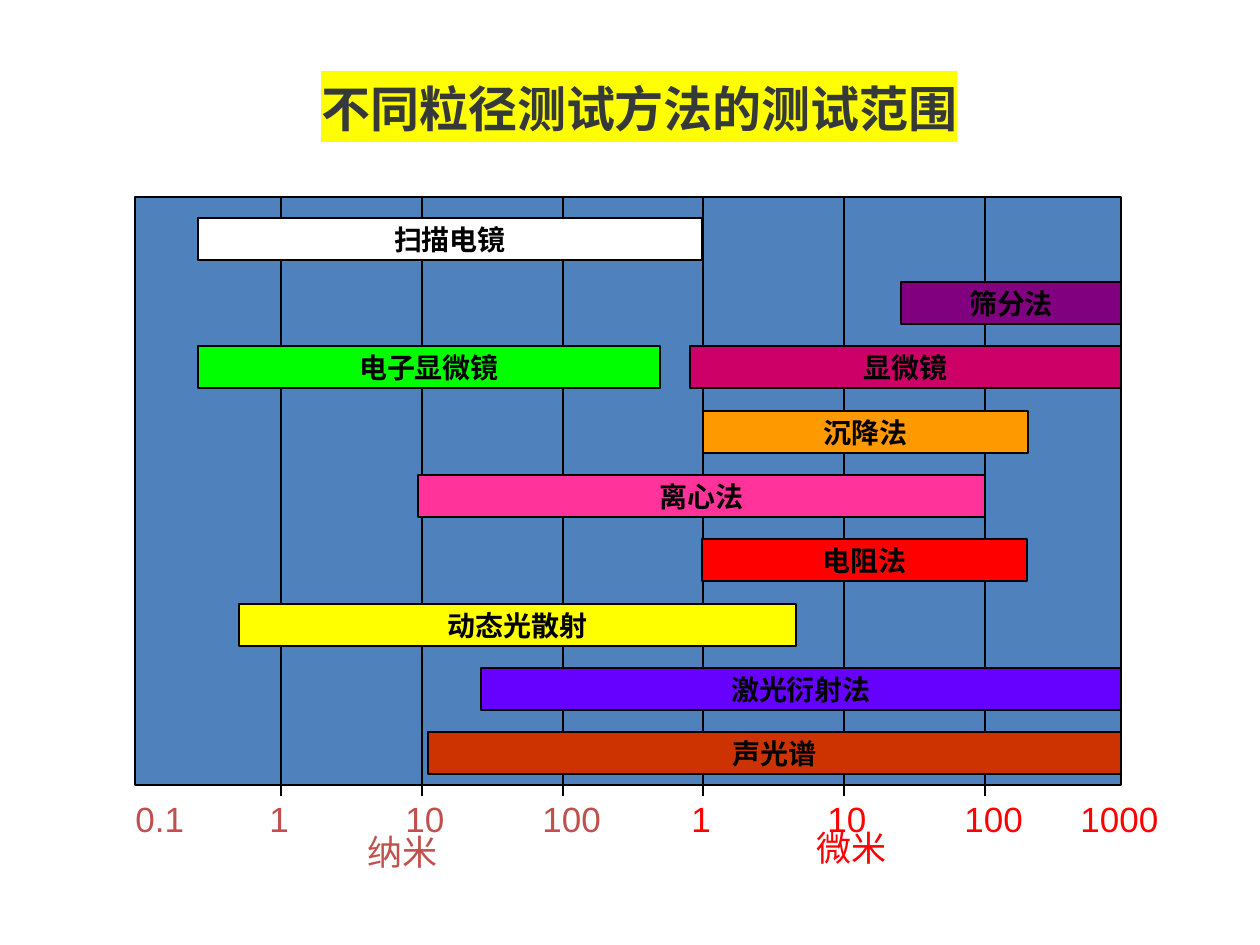
from lxml import etree
from pptx import Presentation
from pptx.dml.color import RGBColor
from pptx.enum.shapes import MSO_CONNECTOR, MSO_SHAPE
from pptx.enum.text import MSO_ANCHOR, PP_ALIGN
from pptx.oxml.ns import qn
from pptx.util import Emu, Pt

RECTANGLE = MSO_SHAPE.RECTANGLE
STRAIGHT = MSO_CONNECTOR.STRAIGHT
MIDDLE = MSO_ANCHOR.MIDDLE
CENTER = PP_ALIGN.CENTER

EMU_PER_PX = 914400 / 126
LATIN_FONT = "Arial"
CJK_FONT = "Noto Sans CJK SC"
BLACK = "000000"
NANO_COLOR = "C0504D"
MICRO_COLOR = "FF0000"

PLOT_LEFT, PLOT_TOP, PLOT_WIDTH, PLOT_HEIGHT = 135, 197, 986, 588
TICK_BOTTOM = 796
FIRST_DECADE, DECADE_STEP = 281, 140.8
LABEL_TOP, LABEL_HEIGHT = 791, 54
FIRST_BAR, BAR_STEP, BAR_HEIGHT = 218, 64.25, 42

DECADES = [
    ("1", NANO_COLOR), ("10", NANO_COLOR), ("100", NANO_COLOR),
    ("1", MICRO_COLOR), ("10", MICRO_COLOR), ("100", MICRO_COLOR),
]
# Number of digits: distance from the gridline to the label's left, label width
LABEL_SIZES = {1: (24, 42), 2: (29, 73), 3: (33, 95)}

# Method, row, left, width, fill
METHODS = [
    ("扫描电镜", 0, 198, 504, "FFFFFF"),
    ("筛分法", 1, 901, 220, "800080"),
    ("电子显微镜", 2, 198, 462, "00FF00"),
    ("显微镜", 2, 690, 431, "CC0066"),
    ("沉降法", 3, 703, 325, "FF9900"),
    ("离心法", 4, 418, 567, "FF3399"),
    ("电阻法", 5, 702, 325, "FF0000"),
    ("动态光散射", 6, 239, 557, "FFFF00"),
    ("激光衍射法", 7, 481, 640, "6600FF"),
    ("声光谱", 8, 428, 693, "CC3300"),
]


def px(length):
    return Emu(round(length * EMU_PER_PX))


def color(hex_string):
    return RGBColor.from_string(hex_string)


def set_font(font, name, size, hex_string, bold=False):
    font.name = name
    font.size = Pt(size)
    font.bold = bold
    font.color.rgb = color(hex_string)


def add_rectangle(page, left, top, width, height, fill):
    box = page.shapes.add_shape(RECTANGLE, px(left), px(top), px(width), px(height))
    box.shadow.inherit = False
    box.fill.solid()
    box.fill.fore_color.rgb = color(fill)
    box.line.color.rgb = color(BLACK)
    box.line.width = Pt(0.75)
    return box


def add_method_bar(page, name, row, left, width, fill):
    top = round(FIRST_BAR + row * BAR_STEP)
    bar = add_rectangle(page, left, top, width, BAR_HEIGHT, fill)
    frame = bar.text_frame
    frame.word_wrap = False
    frame.vertical_anchor = MIDDLE
    para = frame.paragraphs[0]
    para.text = name
    para.alignment = CENTER
    set_font(para.font, LATIN_FONT, 16, BLACK, bold=True)


def add_gridline(page, x):
    line = page.shapes.add_connector(STRAIGHT, px(x), px(PLOT_TOP), px(x), px(TICK_BOTTOM))
    line.line.color.rgb = color(BLACK)
    line.line.width = Pt(0.75)
    etree.SubElement(line._element.spPr, qn("a:effectLst"))


def add_label(page, text, left, top, width, hex_string):
    box = page.shapes.add_textbox(px(left), px(top), px(width), px(LABEL_HEIGHT))
    box.text_frame.word_wrap = True
    para = box.text_frame.paragraphs[0]
    para.text = text
    set_font(para.font, LATIN_FONT, 20, hex_string)


def add_title(page, text):
    box = page.shapes.add_textbox(px(309), px(79), px(677), px(60))
    frame = box.text_frame
    frame.word_wrap = True
    frame.margin_top = frame.margin_bottom = 0
    span = frame.paragraphs[0].add_run()
    span.text = text
    set_font(span.font, CJK_FONT, 28, "353939", bold=True)
    latin = span._r.rPr.find(qn("a:latin"))
    highlight = etree.Element(qn("a:highlight"))
    etree.SubElement(highlight, qn("a:srgbClr"), val="FFFF00")
    latin.addprevious(highlight)
    latin.addnext(etree.Element(qn("a:ea"), typeface=CJK_FONT))


def add_axis(page):
    """Draw the decade gridlines, their labels and the two units."""
    positions = [round(FIRST_DECADE + i * DECADE_STEP) for i in range(len(DECADES))]
    for x in positions:
        add_gridline(page, x)
    for x, (text, hex_string) in zip(positions, DECADES):
        offset, width = LABEL_SIZES[len(text)]
        add_label(page, text, x - offset, LABEL_TOP, width, hex_string)
    add_label(page, "0.1", 123, LABEL_TOP, 84, NANO_COLOR)
    add_label(page, "1000", 1068, LABEL_TOP, 126, MICRO_COLOR)
    add_label(page, "纳米", 355, 824, 231, NANO_COLOR)
    add_label(page, "微米", 804, 820, 189, MICRO_COLOR)


def main():
    deck = Presentation()
    deck.slide_width, deck.slide_height = px(1260), px(945)
    page = deck.slides.add_slide(deck.slide_layouts[6])
    add_rectangle(page, PLOT_LEFT, PLOT_TOP, PLOT_WIDTH, PLOT_HEIGHT, "4F81BD")
    add_axis(page)
    for method in METHODS:
        add_method_bar(page, *method)
    add_title(page, "不同粒径测试方法的测试范围")
    deck.save("out.pptx")


if __name__ == "__main__":
    main()
